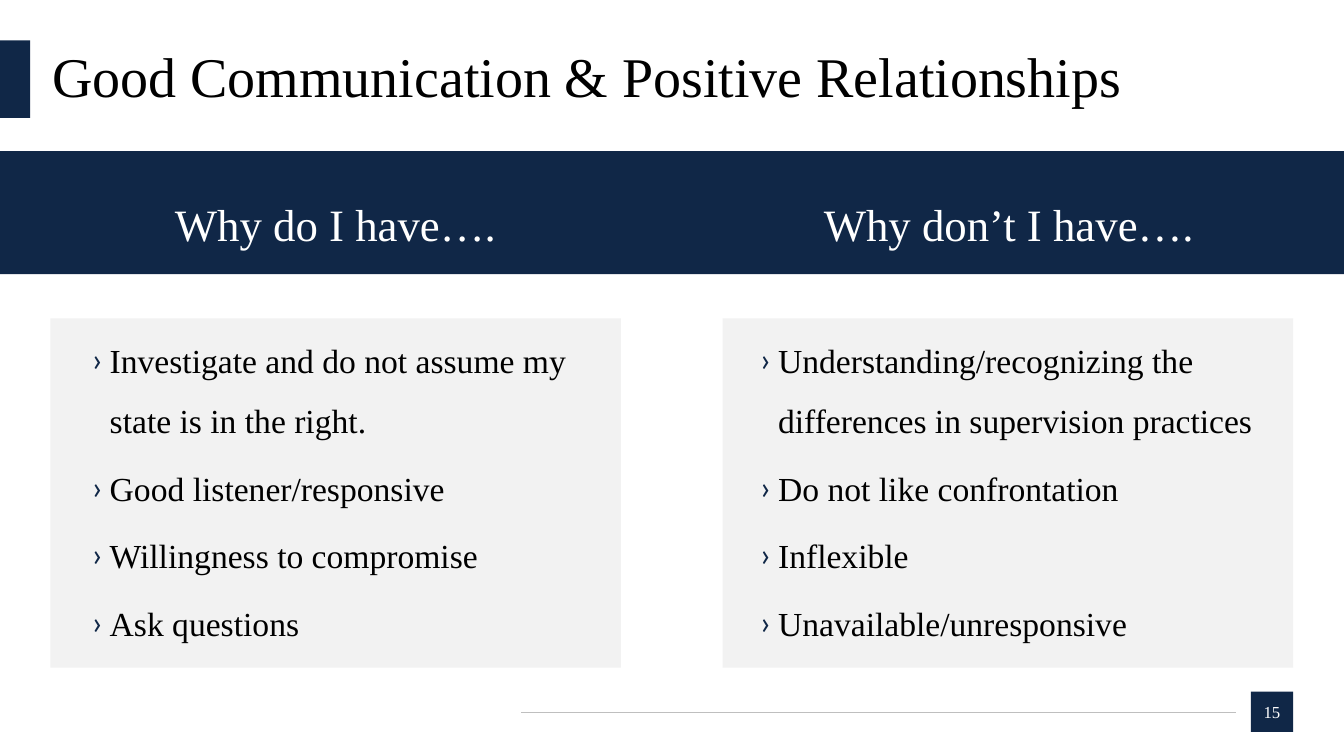
"""Build the slide on good communication and positive relationships."""
from lxml import etree
from pptx import Presentation
from pptx.dml.color import RGBColor
from pptx.enum.shapes import MSO_CONNECTOR, MSO_SHAPE
from pptx.enum.text import MSO_ANCHOR, PP_ALIGN
from pptx.oxml.ns import qn
from pptx.util import Pt

RECTANGLE = MSO_SHAPE.RECTANGLE
STRAIGHT = MSO_CONNECTOR.STRAIGHT
TOP, MIDDLE = MSO_ANCHOR.TOP, MSO_ANCHOR.MIDDLE
LEFT, CENTER = PP_ALIGN.LEFT, PP_ALIGN.CENTER
FONT = "Times New Roman"
COLORS = {"navy": "102747", "panel": "F2F2F2", "rule": "BFBFBF",
          "black": "000000", "white": "FFFFFF"}

deck = Presentation()
deck.slide_width, deck.slide_height = Pt(960), Pt(540)
slide = deck.slides.add_slide(deck.slide_layouts[6])


def add_block(left, top, width, height, color):
    block = slide.shapes.add_shape(RECTANGLE, Pt(left), Pt(top), Pt(width), Pt(height))
    block.shadow.inherit = False
    block.fill.solid()
    block.fill.fore_color.rgb = RGBColor.from_string(COLORS[color])
    block.line.fill.background()
    return block


def write(shape, *lines, size, color="black", align=LEFT, anchor=TOP,
          spacing=1.0, before=0, bullet=None):
    frame = shape.text_frame
    frame.word_wrap = True
    frame.vertical_anchor = anchor
    frame.margin_left = frame.margin_top = frame.margin_right = frame.margin_bottom = 0
    for index, line in enumerate(lines):
        paragraph = frame.add_paragraph() if index else frame.paragraphs[0]
        paragraph.alignment = align
        paragraph.line_spacing = spacing
        paragraph.space_before = Pt(before if index else 0)
        if bullet:
            properties = paragraph._p.get_or_add_pPr()
            properties.set("marL", str(Pt(41)))
            properties.set("indent", str(Pt(-13)))
            bullet_color = etree.SubElement(properties, qn("a:buClr"))
            etree.SubElement(bullet_color, qn("a:srgbClr"), val=COLORS["navy"])
            etree.SubElement(properties, qn("a:buFont"), typeface="+mn-lt")
            etree.SubElement(properties, qn("a:buChar"), char=bullet)
        run = paragraph.add_run()
        run.text = line
        run.font.name = FONT
        run.font.size = Pt(size)
        run.font.color.rgb = RGBColor.from_string(COLORS[color])


title = slide.shapes.add_textbox(Pt(37.4), Pt(28.8), Pt(886.3), Pt(55.4))
write(title, "Good Communication & Positive Relationships",
      size=40, anchor=MIDDLE, spacing=0.9)
add_block(0, 28.8, 21.6, 55.4, "navy")
add_block(0, 108, 960, 87.8, "navy")

columns = [
    (36, 37.4, 66.2, "Why do I have….",
     ["Investigate and do not assume my state is in the right.",
      "Good listener/responsive",
      "Willingness to compromise",
      "Ask questions"]),
    (516.2, 514.8, 547.2, "Why don’t I have….",
     ["Understanding/recognizing the differences in supervision practices",
      "Do not like confrontation",
      "Inflexible",
      "Unavailable/unresponsive"]),
]
for panel_left, reasons_left, question_left, question, reasons in columns:
    add_block(panel_left, 227.5, 407.5, 249.5, "panel")
    question_box = slide.shapes.add_textbox(Pt(question_left), Pt(140.4), Pt(347), Pt(38.9))
    write(question_box, question, size=32, color="white", align=CENTER)
    reasons_box = slide.shapes.add_textbox(Pt(reasons_left), Pt(228.2), Pt(406), Pt(233.3))
    write(reasons_box, *reasons, size=24, spacing=1.5, before=5, bullet="›")

footer_rule = slide.shapes.add_connector(STRAIGHT, Pt(372.2), Pt(508.5), Pt(882.7), Pt(508.5))
footer_rule.line.color.rgb = RGBColor.from_string(COLORS["rule"])
footer_rule.line.width = Pt(0.5)
etree.SubElement(footer_rule._element.spPr, qn("a:effectLst"))

page_number = add_block(893.5, 494, 30.2, 28.8, "navy")
write(page_number, "15", size=12, color="white", align=CENTER, anchor=MIDDLE)

deck.save("out.pptx")
